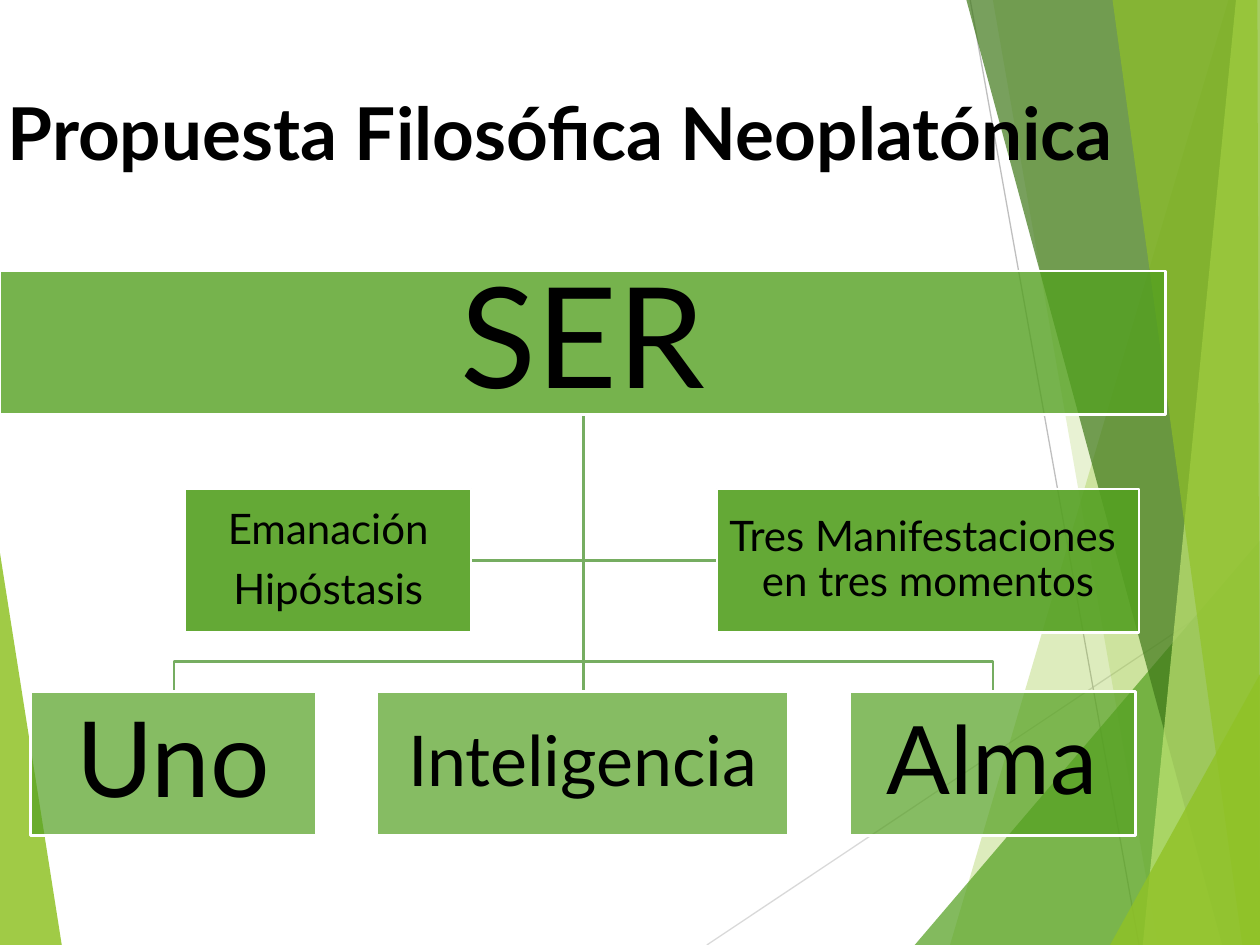
from typing import NamedTuple

from lxml import etree
from pptx import Presentation
from pptx.dml.color import RGBColor
from pptx.enum.shapes import MSO_CONNECTOR, MSO_SHAPE
from pptx.enum.text import MSO_ANCHOR, PP_ALIGN
from pptx.oxml.ns import qn
from pptx.util import Inches, Pt

RECT = MSO_SHAPE.RECTANGLE
LINE = MSO_CONNECTOR.STRAIGHT
MIDDLE = MSO_ANCHOR.MIDDLE
CENTER, LEFT = PP_ALIGN.CENTER, PP_ALIGN.LEFT
FONT = "Lato"
COLORS = {
    "lime": "90C226",
    "green": "54A021",
    "dark": "3F7819",
    "pale": "C0E474",
    "link": "76AD61",
    "gray": "BFBFBF",
    "silver": "D9D9D9",
    "white": "FFFFFF",
    "black": "000000",
}
Point = tuple[float, float]


class Facet(NamedTuple):
    color: str
    alpha: int
    points: list[Point]


class Ray(NamedTuple):
    color: str
    start: Point
    end: Point


class Box(NamedTuple):
    lines: list[str]
    left: float
    top: float
    width: float
    size: int
    alpha: int
    inset: float


WIDE, HIGH = 10, 7.5
BOX_HIGH = 1.14
TOP, MID, LOW = 2.15, 3.88, 5.49
STEM, BAR = 4.63, 5.25
START = (STEM, TOP + BOX_HIGH)
SIDE = MID + BOX_HIGH / 2

WEDGE = Facet("lime", 85, [(0, 4.39), (0.49, HIGH), (0, HIGH)])
RAYS = [
    Ray("silver", (5.61, HIGH), (WIDE, 4.57)),
    Ray("gray", (7.7, 0), (9.04, HIGH)),
]
FACETS = [
    Facet("lime", 30, [(9.75, 0), (7.54, HIGH), (WIDE, HIGH), (WIDE, 0)]),
    Facet("lime", 20, [(7.88, 0), (9.19, HIGH), (WIDE, HIGH), (WIDE, 0)]),
    Facet("green", 72, [(7.26, HIGH), (WIDE, 4.29), (WIDE, HIGH)]),
    Facet("dark", 70, [(7.67, 0), (9.7, HIGH), (WIDE, HIGH), (WIDE, 0)]),
    Facet("pale", 70, [(9.81, 0), (9.07, HIGH), (WIDE, HIGH), (WIDE, 0)]),
    Facet("lime", 65, [(8.83, 0), (9.86, HIGH), (WIDE, HIGH), (9.98, 0)]),
    Facet("lime", 80, [(8.81, HIGH), (WIDE, 5.35), (WIDE, HIGH)]),
]
LINKS = [[START, (STEM, SIDE), (x, SIDE)] for x in (5.69, 3.74)]
LINKS += [[START, (STEM, BAR), (x, BAR), (x, LOW)] for x in (7.88, 1.38)]
LINKS.append([START, (STEM, LOW)])
BOXES = [
    Box(["SER"], 0, TOP, 9.25, 80, 80, 0.06),
    Box(["Uno"], 0.24, LOW, 2.27, 60, 70, 0.04),
    Box(["Inteligencia"], 2.99, LOW, 3.27, 40, 70, 0.03),
    Box(["Alma"], 6.74, LOW, 2.27, 54, 70, 0.04),
    Box(["Emanación", "Hipóstasis"], 1.47, MID, 2.27, 24, 90, 0.02),
    Box(["Tres Manifestaciones  en tres momentos"], 5.69, MID, 3.35, 24, 90, 0.02),
]


def tint(name: str) -> RGBColor:
    return RGBColor.from_string(COLORS[name])


def paint(shape, name: str, alpha: int) -> None:
    shape.shadow.inherit = False
    shape.fill.solid()
    shape.fill.fore_color.rgb = tint(name)
    color = shape._element.spPr.find(qn("a:solidFill"))[0]
    etree.SubElement(color, qn("a:alpha")).set("val", str(alpha * 1000))


def stroke(shape, name: str, width: float) -> None:
    shape.line.color.rgb = tint(name)
    shape.line.width = Pt(width)


def trace(shapes, points: list[Point], close: bool):
    start, *rest = [(Inches(x), Inches(y)) for x, y in points]
    form = shapes.build_freeform(*start)
    form.add_line_segments(rest, close=close)
    return form.convert_to_shape()


def draw_facet(shapes, facet: Facet) -> None:
    shape = trace(shapes, facet.points, True)
    paint(shape, facet.color, facet.alpha)
    shape.line.fill.background()


def draw_ray(shapes, ray: Ray) -> None:
    ends = [Inches(v) for v in ray.start + ray.end]
    line = shapes.add_connector(LINE, *ends)
    stroke(line, ray.color, 0.75)
    etree.SubElement(line._element.spPr, qn("a:effectLst"))


def draw_link(shapes, points: list[Point]) -> None:
    shape = trace(shapes, points, False)
    shape.shadow.inherit = False
    shape.fill.background()
    stroke(shape, "link", 1.5)


def write(par, text: str, size: float, bold: bool = False) -> None:
    run = par.add_run()
    run.text = text
    run.font.name = FONT
    run.font.size = Pt(size)
    run.font.bold = bold
    run.font.color.rgb = tint("black")


def set_frame(frame, left: float, rest: float) -> None:
    frame.word_wrap = True
    frame.vertical_anchor = MIDDLE
    frame.margin_left = Inches(left)
    frame.margin_right = frame.margin_top = frame.margin_bottom = Inches(rest)


def draw_box(shapes, box: Box) -> None:
    area = [Inches(v) for v in (box.left, box.top, box.width, BOX_HIGH)]
    shape = shapes.add_shape(RECT, *area)
    paint(shape, "green", box.alpha)
    stroke(shape, "white", 1.5)
    frame = shape.text_frame
    set_frame(frame, box.inset, box.inset)
    for i, text in enumerate(box.lines):
        par = frame.add_paragraph() if i else frame.paragraphs[0]
        par.alignment = CENTER
        par.line_spacing = 0.9
        par.space_after = Pt(box.size * 0.35)
        write(par, text, box.size)


def draw_title(shapes, text: str) -> None:
    title = shapes.title
    title.left, title.top = Inches(-0.04), Inches(0.36)
    title.width, title.height = Inches(9.43), Inches(1.37)
    set_frame(title.text_frame, 0.1, 0.05)
    par = title.text_frame.paragraphs[0]
    par.alignment = LEFT
    write(par, text, 41.6, True)
    shapes._spTree.append(title._element)


def main() -> None:
    deck = Presentation()
    deck.slide_width, deck.slide_height = Inches(WIDE), Inches(HIGH)
    shapes = deck.slides.add_slide(deck.slide_layouts[5]).shapes
    draw_facet(shapes, WEDGE)
    for ray in RAYS:
        draw_ray(shapes, ray)
    for facet in FACETS:
        draw_facet(shapes, facet)
    for link in LINKS:
        draw_link(shapes, link)
    for box in BOXES:
        draw_box(shapes, box)
    draw_title(shapes, "Propuesta Filosófica Neoplatónica")
    deck.save("out.pptx")


if __name__ == "__main__":
    main()
